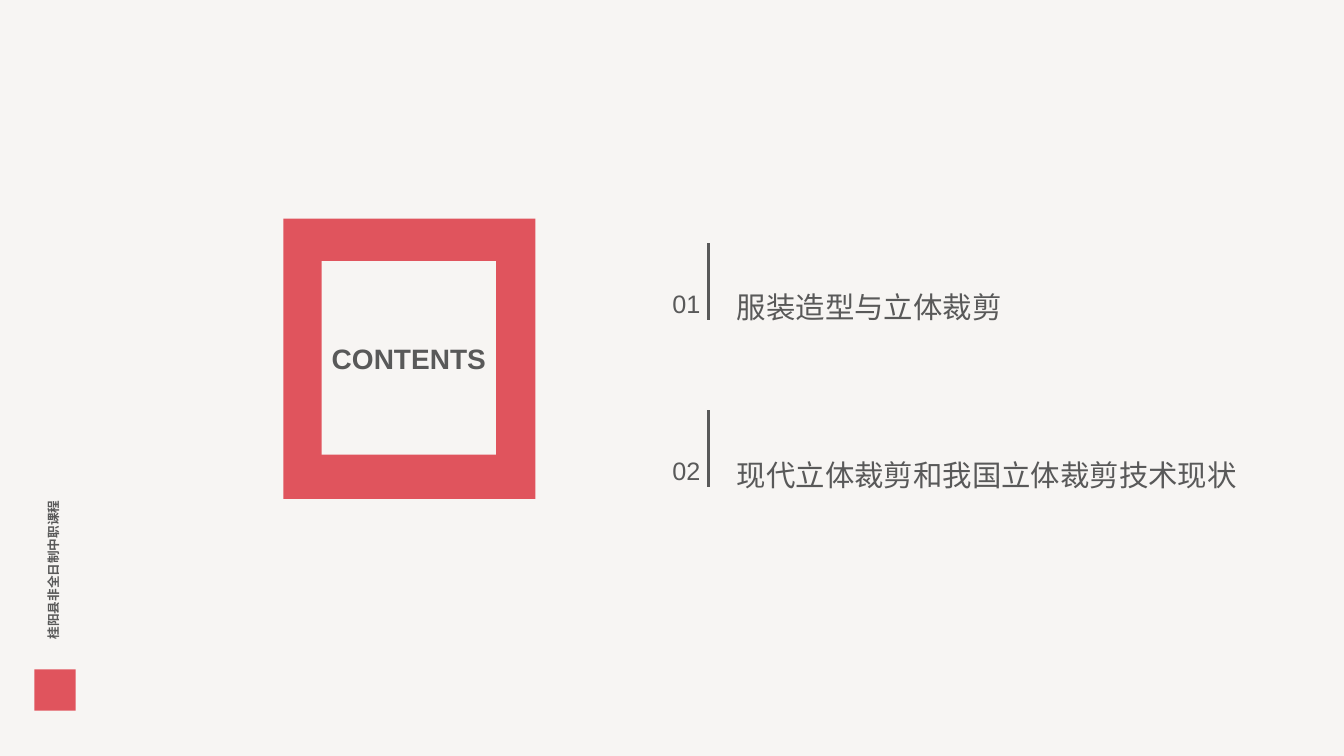
from dataclasses import dataclass

import pptx
import pptx.dml.color
import pptx.enum.shapes
import pptx.enum.text
import pptx.oxml
import pptx.oxml.ns
import pptx.shapes.autoshape
import pptx.slide
import pptx.util

Inches = pptx.util.Inches
Anchor = pptx.enum.text.MSO_ANCHOR
Align = pptx.enum.text.PP_ALIGN

COLORS = {"paper": "F7F5F3", "accent": "E0545D", "ink": "595959"}
FONT = "Arial"
FIRST_CHAPTER_TOP = 2.41
CHAPTER_STEP = 1.66


@dataclass(frozen=True)
class Box:
    left: float
    top: float
    width: float
    height: float

    def lengths(self) -> tuple[int, int, int, int]:
        return (Inches(self.left), Inches(self.top),
                Inches(self.width), Inches(self.height))


@dataclass(frozen=True)
class Block:
    box: Box
    color: str


@dataclass(frozen=True)
class Chapter:
    number: str
    heading: str


BLOCKS = [
    Block(Box(2.81, 2.17, 2.5, 2.78), "accent"),
    Block(Box(3.19, 2.59, 1.73, 1.92), "paper"),
    Block(Box(0.34, 6.64, 0.41, 0.41), "accent"),
]
CHAPTERS = [
    Chapter("01", "服装造型与立体裁剪"),
    Chapter("02", "现代立体裁剪和我国立体裁剪技术现状"),
]


def rgb(name: str) -> pptx.dml.color.RGBColor:
    return pptx.dml.color.RGBColor.from_string(COLORS[name])


def set_text(shape: pptx.shapes.autoshape.Shape, text: str, size: float,
             bold: bool = False, align: Align = Align.LEFT,
             anchor: Anchor = Anchor.TOP, wrap: bool = True) -> None:
    frame = shape.text_frame
    frame.text = text
    frame_format = {"vertical_anchor": anchor, "word_wrap": wrap,
                    "auto_size": pptx.enum.text.MSO_AUTO_SIZE.NONE}
    for attribute, value in frame_format.items():
        setattr(frame, attribute, value)
    paragraph = frame.paragraphs[0]
    paragraph.alignment = align
    font = paragraph.runs[0].font
    font_format = {"name": FONT, "size": pptx.util.Pt(size), "bold": bold}
    for attribute, value in font_format.items():
        setattr(font, attribute, value)
    font.color.rgb = rgb("ink")


def add_block(slide: pptx.slide.Slide, block: Block) -> None:
    square = slide.shapes.add_shape(
        pptx.enum.shapes.MSO_SHAPE.RECTANGLE, *block.box.lengths())
    square.shadow.inherit = False
    square.fill.solid()
    square.fill.fore_color.rgb = rgb(block.color)
    square.line.fill.background()


def add_chapter(slide: pptx.slide.Slide, chapter: Chapter, top: float) -> None:
    """Draw the number, the upright rule and the heading of one chapter."""
    rule = slide.shapes.add_connector(
        pptx.enum.shapes.MSO_CONNECTOR.STRAIGHT,
        Inches(7.03), Inches(top + 0.76), Inches(7.03), Inches(top))
    rule.line.color.rgb = rgb("ink")
    rule.line.width = pptx.util.Pt(2.25)
    properties = rule.element.find(pptx.oxml.ns.qn("p:spPr"))
    properties.append(pptx.oxml.parse_xml(
        f"<a:effectLst {pptx.oxml.ns.nsdecls('a')}/>"))

    heading = slide.shapes.add_textbox(*Box(7.21, top + 0.44, 5.2, 0.42).lengths())
    set_text(heading, chapter.heading, 21, anchor=Anchor.BOTTOM, wrap=False)
    number = slide.shapes.add_textbox(*Box(6.57, top + 0.4, 0.53, 0.4).lengths())
    set_text(number, chapter.number, 18, anchor=Anchor.BOTTOM)


def add_title(slide: pptx.slide.Slide) -> None:
    """Place the title inside the frame, in front of its blocks."""
    title = slide.shapes.title
    title.left, title.top, title.width, title.height = Box(3.04, 3.27, 2.03, 0.57).lengths()
    set_text(title, "CONTENTS", 20, bold=True, align=Align.CENTER, anchor=Anchor.MIDDLE)
    title.element.getparent().append(title.element)


def add_course_label(slide: pptx.slide.Slide) -> None:
    label = slide.shapes.add_textbox(*Box(-1.05, 4.71, 3.19, 0.27).lengths())
    label.rotation = 270
    set_text(label, "桂阳县非全日制中职课程", 9, bold=True)


def main() -> None:
    presentation = pptx.Presentation()
    presentation.slide_width = Inches(13.33)
    presentation.slide_height = Inches(7.5)
    title_only = presentation.slide_layouts.get_by_name("Title Only")
    slide = presentation.slides.add_slide(title_only)
    slide.background.fill.solid()
    slide.background.fill.fore_color.rgb = rgb("paper")

    for block in BLOCKS:
        add_block(slide, block)
    add_title(slide)
    add_course_label(slide)
    for index, chapter in enumerate(CHAPTERS):
        add_chapter(slide, chapter, FIRST_CHAPTER_TOP + index * CHAPTER_STEP)

    presentation.save("out.pptx")


if __name__ == "__main__":
    main()
